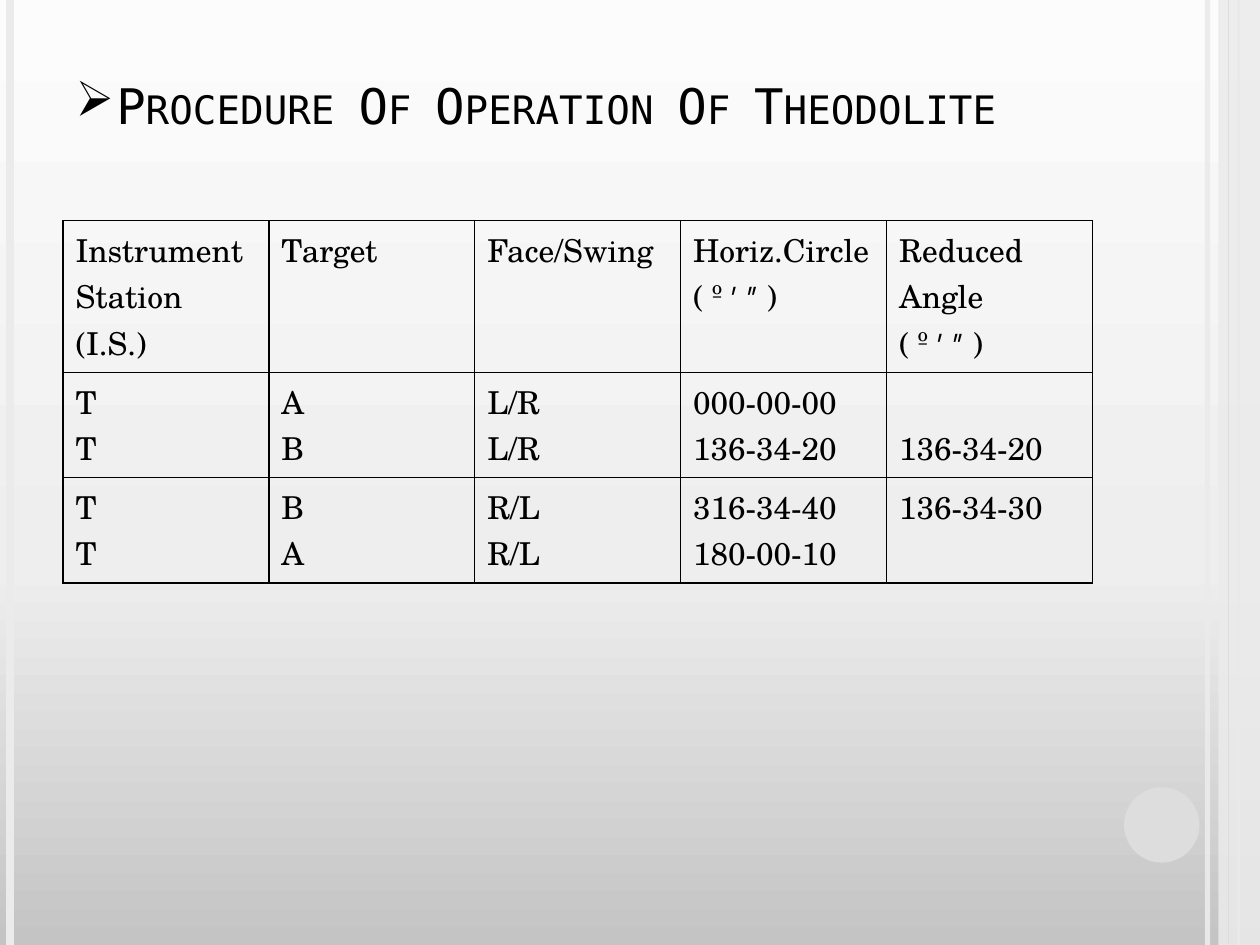
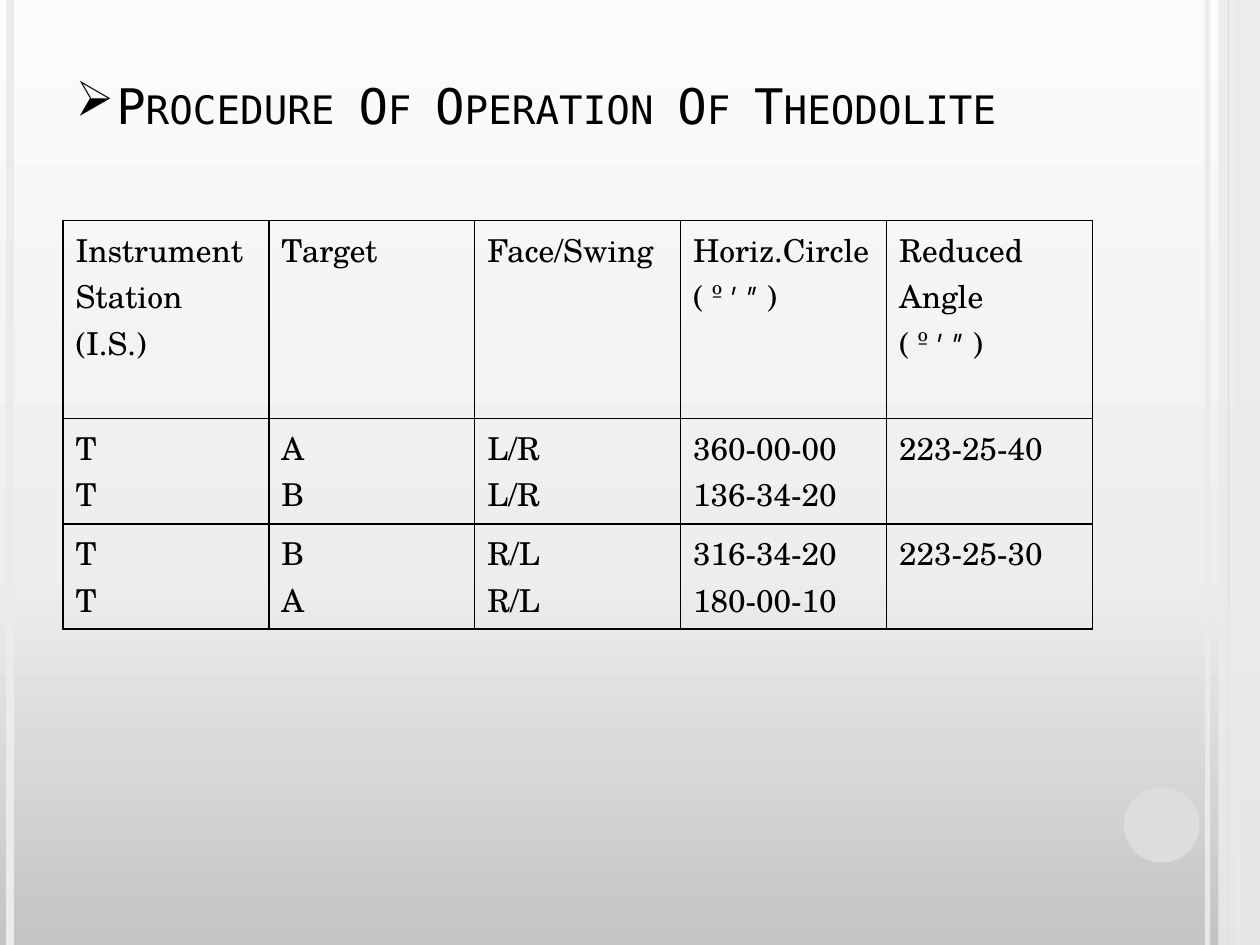
from copy import deepcopy
from dataclasses import dataclass

from lxml import etree
from pptx import Presentation
from pptx.dml.color import RGBColor
from pptx.enum.shapes import MSO_CONNECTOR, MSO_SHAPE
from pptx.enum.text import MSO_ANCHOR, MSO_AUTO_SIZE, PP_ALIGN
from pptx.oxml.ns import qn
from pptx.util import Cm, Pt

STRAIGHT = MSO_CONNECTOR.STRAIGHT
RECTANGLE, OVAL = MSO_SHAPE.RECTANGLE, MSO_SHAPE.OVAL
TOP, BOTTOM = MSO_ANCHOR.TOP, MSO_ANCHOR.BOTTOM
LEFT = PP_ALIGN.LEFT
NO_AUTOFIT = MSO_AUTO_SIZE.NONE
TITLE_ONLY = 5

SLIDE_WIDTH, SLIDE_HEIGHT = Cm(25.4), Cm(19.05)
CONTENT_LEFT = Cm(1.27)
COLUMN_WIDTH = Cm(4.15)
READING_HEIGHT = Cm(2.12)


@dataclass(frozen=True)
class Theme:
    ink: str = "000000"
    pale: str = "EBEBEB"
    grey: str = "DDDDDD"
    backdrop: tuple = ((0, "C4C4C4"), (0.4, "EEEEEE"), (1, "FCFCFC"))
    title_font: str = "DejaVu Sans Mono"
    title_size: int = 28
    table_font: str = "TeX Gyre Schola"
    table_size: int = 18
    border_width: int = 1


THEME = Theme()


@dataclass(frozen=True)
class Stripe:
    """A vertical line over the whole slide height; x in centimetres."""
    x: float
    color: str
    width: float
    opacity: int = 100


@dataclass(frozen=True)
class Panel:
    """A filled shape without outline; lengths in centimetres."""
    preset: int
    left: float
    top: float
    width: float
    height: float
    color: str
    opacity: int = 100


@dataclass(frozen=True)
class Entry:
    """The lines of one table cell."""
    lines: tuple
    anchor: int = TOP


@dataclass(frozen=True)
class ReadingSlide:
    header_height: float
    readings: tuple


DECORATION = (
    Stripe(24.34, THEME.pale, 3, 93),
    Stripe(0.2, THEME.pale, 4.5),
    Stripe(24.97, THEME.grey, 1.5),
    Panel(RECTANGLE, 24.56, 0, 0.84, 19.05, THEME.pale, 87),
    Stripe(24.77, THEME.grey, 0.75),
    Panel(OVAL, 22.66, 15.87, 1.52, 1.52, THEME.grey),
)

TITLE = "Procedure Of Operation Of Theodolite"
ANGLE_UNITS = "( º ′ ″ )"
HEADER = (
    Entry(("Instrument", "Station (I.S.)")),
    Entry(("Target",)),
    Entry(("Face/Swing",)),
    Entry(("Horiz.Circle", ANGLE_UNITS)),
    Entry(("Reduced Angle", ANGLE_UNITS)),
)


def reading(targets: str, face: str, circle: tuple, angle: str, anchor: int = TOP) -> tuple:
    """One table row: two sightings from station T and their reduced angle."""
    return (Entry(("T", "T")), Entry(tuple(targets)), Entry((face, face)),
            Entry(circle), Entry((angle,), anchor))


SLIDES = (
    ReadingSlide(3.06, (
        reading("AB", "L/R", ("000-00-00", "136-34-20"), "136-34-20", BOTTOM),
        reading("BA", "R/L", ("316-34-40", "180-00-10"), "136-34-30"),
    )),
    ReadingSlide(3.99, (
        reading("AB", "L/R", ("360-00-00", "136-34-20"), "223-25-40"),
        reading("BA", "R/L", ("316-34-20", "180-00-10"), "223-25-30"),
    )),
)


def rgb(color: str) -> RGBColor:
    return RGBColor.from_string(color)


def set_opacity(element, percent: int) -> None:
    if percent < 100:
        color = next(element.iter(qn("a:srgbClr")))
        etree.SubElement(color, qn("a:alpha")).set("val", str(percent * 1000))


def add_span(para, text: str, font: str, size: float) -> None:
    span = para.add_run()
    span.text = text
    span.font.name = font
    span.font.size = Pt(size)
    span.font.color.rgb = rgb(THEME.ink)


def paint_backdrop(master) -> None:
    fill = master.background.fill
    fill.gradient()
    fill.gradient_angle = 90
    stop_list = next(master.element.iter(qn("a:gsLst")))
    stop_list.append(deepcopy(stop_list[-1]))
    for stop, (position, color) in zip(fill.gradient_stops, THEME.backdrop):
        stop.position = position
        stop.color.rgb = rgb(color)


def add_stripe(page, stripe: Stripe) -> None:
    line = page.shapes.add_connector(STRAIGHT, Cm(stripe.x), 0, Cm(stripe.x), SLIDE_HEIGHT)
    line.line.color.rgb = rgb(stripe.color)
    line.line.width = Pt(stripe.width)
    set_opacity(line.element, stripe.opacity)
    etree.SubElement(line.element.find(qn("p:spPr")), qn("a:effectLst"))


def add_panel(page, panel: Panel) -> None:
    shape = page.shapes.add_shape(panel.preset, Cm(panel.left), Cm(panel.top),
                                  Cm(panel.width), Cm(panel.height))
    shape.shadow.inherit = False
    shape.fill.solid()
    shape.fill.fore_color.rgb = rgb(panel.color)
    shape.line.fill.background()
    set_opacity(shape.element, panel.opacity)


def decorate(page) -> None:
    for item in DECORATION:
        if isinstance(item, Stripe):
            add_stripe(page, item)
        else:
            add_panel(page, item)


def write_title(page) -> None:
    box = page.shapes.title
    box.left, box.top = CONTENT_LEFT, Cm(0.76)
    box.width, box.height = 5 * COLUMN_WIDTH, Cm(3.18)
    frame = box.text_frame
    frame.word_wrap = True
    frame.auto_size = NO_AUTOFIT
    frame.vertical_anchor = BOTTOM
    frame.margin_bottom = Cm(1.24)
    para = frame.paragraphs[0]
    para.alignment = LEFT
    add_span(para, TITLE, THEME.title_font, THEME.title_size)
    next(box.element.iter(qn("a:rPr"))).set("cap", "small")
    layout = next(box.element.iter(qn("a:pPr")))
    hang = Cm(0.82)
    layout.set("marL", str(hang))
    layout.set("indent", str(-hang))
    etree.SubElement(layout, qn("a:buChar")).set("char", "➢")


def add_borders(cell) -> None:
    properties = next(cell.fill and cell_element for cell_element in [cell._tc.get_or_add_tcPr()])
    for index, side in enumerate(("lnL", "lnR", "lnT", "lnB")):
        border = etree.Element(qn(f"a:{side}"), w=str(Pt(THEME.border_width)))
        solid = etree.SubElement(border, qn("a:solidFill"))
        etree.SubElement(solid, qn("a:srgbClr")).set("val", THEME.ink)
        properties.insert(index, border)


def fill_cell(cell, entry: Entry) -> None:
    cell.fill.background()
    cell.vertical_anchor = entry.anchor
    add_borders(cell)
    frame = cell.text_frame
    for index, text in enumerate(entry.lines):
        para = frame.add_paragraph() if index else frame.paragraphs[0]
        add_span(para, text, THEME.table_font, THEME.table_size)


def add_reading_table(page, content: ReadingSlide) -> None:
    rows = (HEADER, *content.readings)
    heights = [Cm(content.header_height)] + [READING_HEIGHT] * len(content.readings)
    table = page.shapes.add_table(len(rows), len(HEADER), CONTENT_LEFT, Cm(4.45),
                                  len(HEADER) * COLUMN_WIDTH, sum(heights)).table
    table.first_row = table.horz_banding = False
    for column in table.columns:
        column.width = COLUMN_WIDTH
    for row, height, entries in zip(table.rows, heights, rows):
        row.height = height
        for cell, entry in zip(row.cells, entries):
            fill_cell(cell, entry)


def main() -> None:
    deck = Presentation()
    deck.slide_width, deck.slide_height = SLIDE_WIDTH, SLIDE_HEIGHT
    paint_backdrop(deck.slide_master)
    for content in SLIDES:
        page = deck.slides.add_slide(deck.slide_layouts[TITLE_ONLY])
        decorate(page)
        write_title(page)
        add_reading_table(page, content)
    deck.save("out.pptx")


if __name__ == "__main__":
    main()
